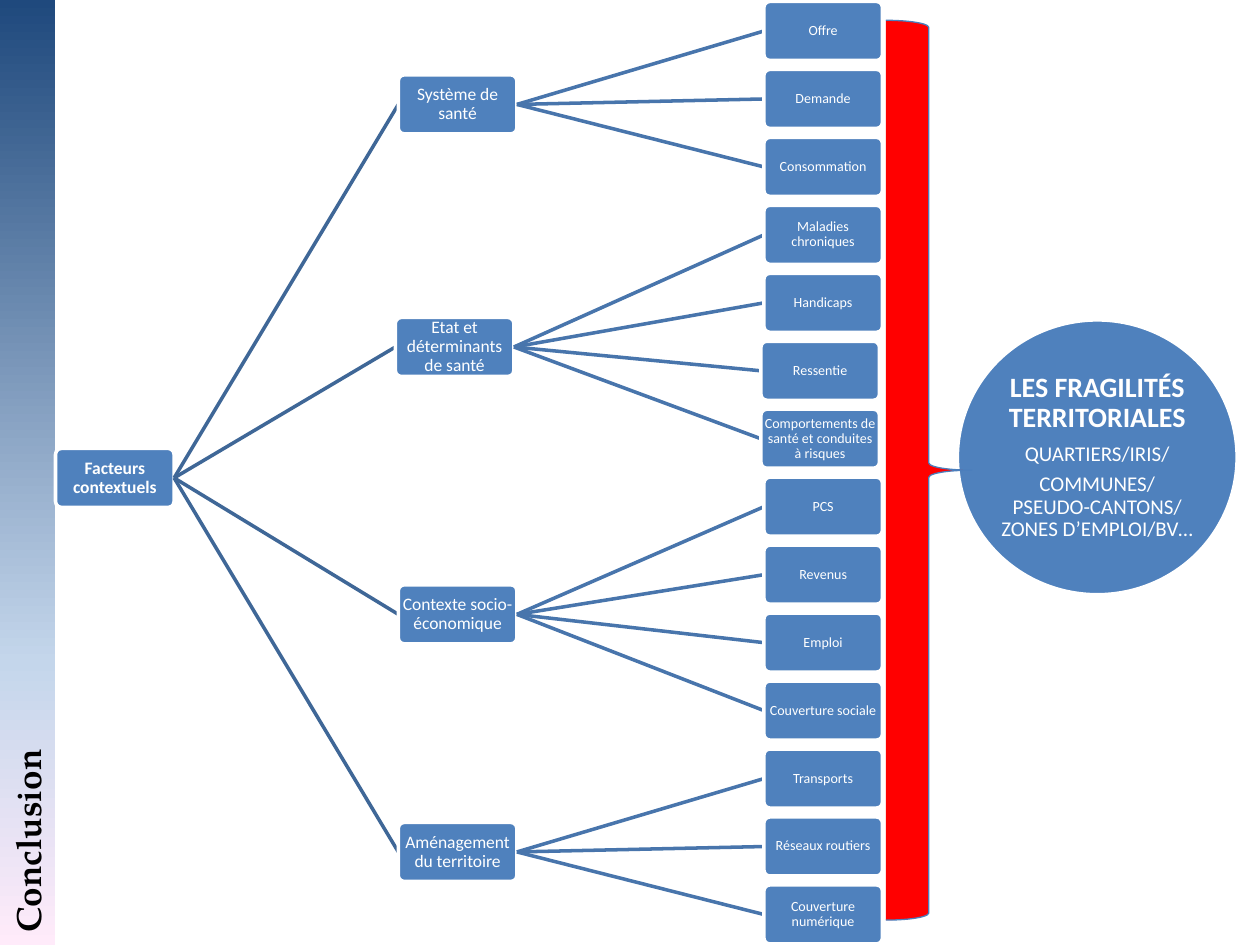
from dataclasses import dataclass

from lxml import etree
from pptx import Presentation
from pptx.dml.color import RGBColor
from pptx.enum.shapes import MSO_CONNECTOR, MSO_SHAPE
from pptx.enum.text import MSO_ANCHOR, PP_ALIGN
from pptx.oxml import parse_xml
from pptx.oxml.ns import nsdecls, qn
from pptx.util import Cm, Pt

STRAIGHT = MSO_CONNECTOR.STRAIGHT
RECTANGLE, ROUNDED = MSO_SHAPE.RECTANGLE, MSO_SHAPE.ROUNDED_RECTANGLE
OVAL, RIGHT_BRACE = MSO_SHAPE.OVAL, MSO_SHAPE.RIGHT_BRACE
CENTER, LEFT = PP_ALIGN.CENTER, PP_ALIGN.LEFT
MIDDLE, TOP = MSO_ANCHOR.MIDDLE, MSO_ANCHOR.TOP
LEFT_SIDE, RIGHT_SIDE = 1, 3


@dataclass(frozen=True)
class Theme:
    blue: str = "4F81BD"
    white: str = "FFFFFF"
    black: str = "000000"
    red: str = "FF0000"
    brace_line: str = "4B7EBC"
    root_link: str = "3F6797"
    leaf_link: str = "4875AC"
    strip_stops: tuple = ((0, "1F497D"), (70, "C4D6EB"), (100, "FFEBFA"))
    body_font: str = "Calibri"
    title_font: str = "TeX Gyre Pagella"
    title_size: float = 20
    heading_size: float = 16
    detail_size: float = 12
    branch_size: float = 10
    leaf_size: float = 8


NODE_WIDTH, NODE_HEIGHT = 2.39, 1.19
ROOT_LEFT, ROOT_TOP = 1.12, 9.04
BRANCH_LEFT, LEAF_LEFT = 8.03, 15.4
LEAF_TOP, LEAF_STEP = 0.03, 1.37
NUDGE = 0.06  # a few boxes sit slightly left of their column

# label, top, shifted left, leaves
BRANCHES = [
    ("Système de santé", 1.51, False, ["Offre", "Demande", "Consommation"]),
    ("Etat et déterminants de santé", 6.4, True,
     ["Maladies chroniques", "Handicaps", "Ressentie",
      "Comportements de santé et conduites à risques"]),
    ("Contexte socio-économique", 11.79, False,
     ["PCS", "Revenus", "Emploi", "Couverture sociale"]),
    ("Aménagement du territoire", 16.58, False,
     ["Transports", "Réseaux routiers", "Couverture numérique"]),
]
SHIFTED_LEAVES = {"Ressentie", "Comportements de santé et conduites à risques"}


class SlideBuilder:
    def __init__(self, slide, theme):
        self.slide = slide
        self.theme = theme

    def shape(self, kind, left, top, width, height, fill, line=None, line_width=2):
        shape = self.slide.shapes.add_shape(
            kind, Cm(left), Cm(top), Cm(width), Cm(height))
        shape.shadow.inherit = False
        shape.fill.solid()
        shape.fill.fore_color.rgb = RGBColor.from_string(fill)
        if line:
            shape.line.color.rgb = RGBColor.from_string(line)
            shape.line.width = Pt(line_width)
        else:
            shape.line.fill.background()
        return shape

    def add_text(self, shape, lines, inset=0.03, align=CENTER, anchor=MIDDLE,
                 font=None, color=None, spacing=0.9):
        """Fill the shape with one paragraph per (text, size, bold) line."""
        frame = shape.text_frame
        frame.word_wrap = True
        frame.vertical_anchor = anchor
        if inset is not None:
            frame.margin_left = frame.margin_right = Cm(inset)
            frame.margin_top = frame.margin_bottom = Cm(inset)
        for index, (text, size, bold) in enumerate(lines):
            paragraph = frame.add_paragraph() if index else frame.paragraphs[0]
            paragraph.alignment = align
            paragraph.line_spacing = spacing
            if index < len(lines) - 1:
                paragraph.space_after = Pt(round(size * 0.35, 1))
            run = paragraph.add_run()
            run.text = text
            run.font.name = font or self.theme.body_font
            run.font.size = Pt(size)
            run.font.bold = bold
            run.font.color.rgb = RGBColor.from_string(color or self.theme.white)

    def node(self, text, left, top, size, bold=False):
        node = self.shape(ROUNDED, left, top, NODE_WIDTH, NODE_HEIGHT,
                          self.theme.blue, self.theme.white)
        node.adjustments[0] = 0.1
        self.add_text(node, [(text, size, bold)])
        return node

    def link(self, parent, child, color):
        """Join two nodes with a line lying just behind the child."""
        connector = self.slide.shapes.add_connector(STRAIGHT, 0, 0, 0, 0)
        connector.begin_connect(parent, RIGHT_SIDE)
        connector.end_connect(child, LEFT_SIDE)
        connector.line.color.rgb = RGBColor.from_string(color)
        connector.line.width = Pt(2)
        etree.SubElement(connector.element.spPr, qn("a:effectLst"))
        child.element.addprevious(connector.element)

    def title_strip(self, text):
        strip = self.shape(RECTANGLE, -8.97, 8.97, 19.05, 1.11, self.theme.blue)
        strip.rotation = 270
        stops = "".join(
            f'<a:gs pos="{position * 1000}"><a:srgbClr val="{color}"/></a:gs>'
            for position, color in self.theme.strip_stops)
        gradient = parse_xml(
            f'<a:gradFill {nsdecls("a")} rotWithShape="0"><a:gsLst>{stops}</a:gsLst>'
            '<a:lin ang="5400000" scaled="0"/></a:gradFill>')
        properties = strip.element.spPr
        properties.replace(properties.find(qn("a:solidFill")), gradient)
        self.add_text(strip, [(text, self.theme.title_size, True)], inset=None,
                      align=LEFT, anchor=TOP, font=self.theme.title_font,
                      color=self.theme.black, spacing=1.0)

    def tree(self):
        theme = self.theme
        root = self.node("Facteurs contextuels", ROOT_LEFT, ROOT_TOP,
                         theme.branch_size, bold=True)
        leaf_top = LEAF_TOP
        for label, top, shifted, leaves in BRANCHES:
            branch = self.node(label, BRANCH_LEFT - NUDGE * shifted, top,
                               theme.branch_size)
            self.link(root, branch, theme.root_link)
            for text in leaves:
                left = LEAF_LEFT - NUDGE * (text in SHIFTED_LEAVES)
                leaf = self.node(text, left, leaf_top, theme.leaf_size)
                self.link(branch, leaf, theme.leaf_link)
                leaf_top += LEAF_STEP

    def outcome(self):
        theme = self.theme
        circle = self.shape(OVAL, 19.3, 6.45, 5.64, 5.54, theme.blue, theme.white)
        self.add_text(circle, [
            ("LES FRAGILITÉS TERRITORIALES", theme.heading_size, True),
            ("QUARTIERS/IRIS/", theme.detail_size, False),
            ("COMMUNES/PSEUDO-CANTONS/ZONES D’EMPLOI/BV…", theme.detail_size, False),
        ], inset=0.05)
        self.shape(RIGHT_BRACE, 17.86, 0.41, 1.73, 18.14, theme.red,
                   theme.brace_line, 0.75)


def main():
    presentation = Presentation()
    presentation.slide_width = Cm(25.4)
    presentation.slide_height = Cm(19.05)
    slide = presentation.slides.add_slide(presentation.slide_layouts[6])
    builder = SlideBuilder(slide, Theme())
    builder.title_strip("Conclusion")
    builder.tree()
    builder.outcome()
    presentation.save("out.pptx")


if __name__ == "__main__":
    main()
